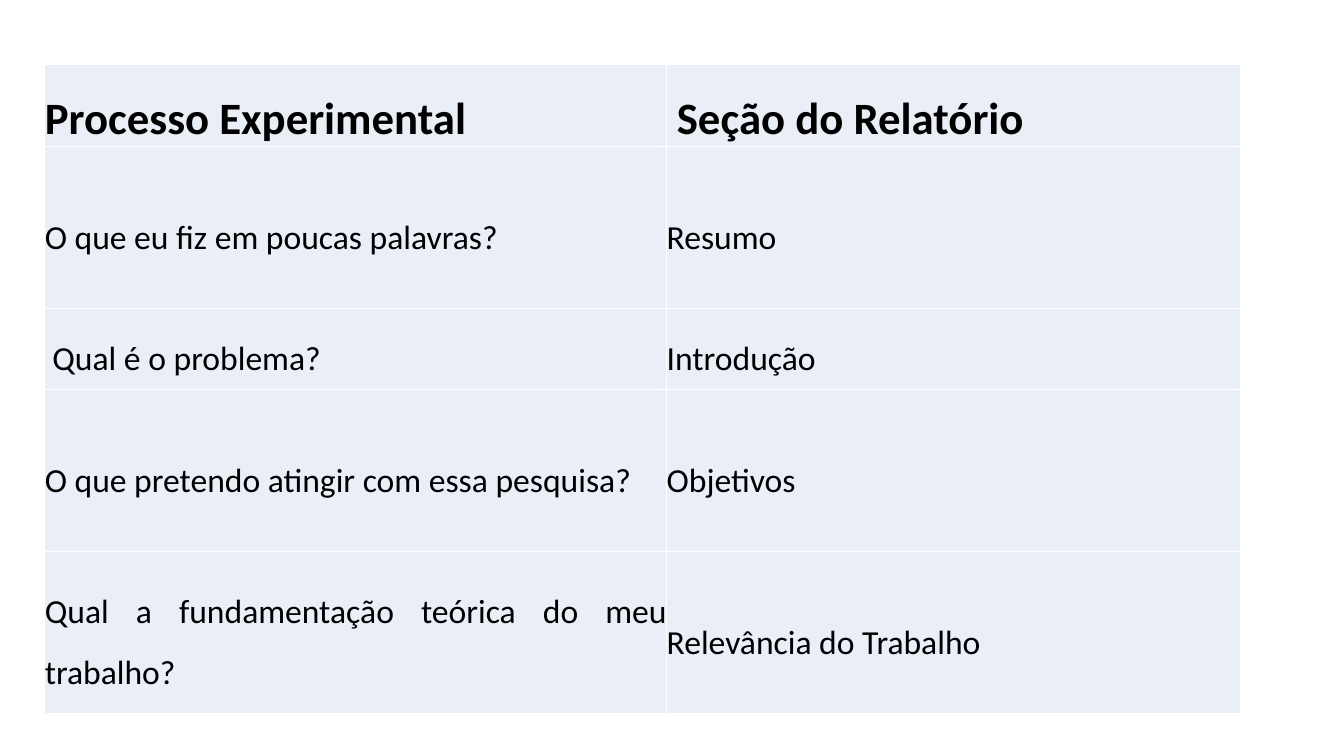
from dataclasses import dataclass

import pptx
import pptx.dml.color
import pptx.enum.text
import pptx.oxml
import pptx.oxml.ns
import pptx.util
from pptx.util import Pt


@dataclass(frozen=True)
class Theme:
    font: str = "Calibri"
    text: str = "000000"
    fill: str = "EAEFF7"
    border: str = "FFFFFF"
    header_size: int = 32
    body_size: int = 24


THEME = Theme()
ROW_UNIT = 57.8
COLUMN_WIDTHS = (444.24, 409.68)
# Each row: height in row units, experimental question, report section
ROWS = (
    (1, "Processo Experimental", " Seção do Relatório"),
    (2, "O que eu fiz em poucas palavras?", "Resumo"),
    (1, " Qual é o problema?", "Introdução"),
    (2, "O que pretendo atingir com essa pesquisa?", "Objetivos"),
    (2, "Qual a fundamentação teórica do meu trabalho?", "Relevância do Trabalho"),
)


def rgb(color):
    return pptx.dml.color.RGBColor.from_string(color)


def add_borders(cell):
    """Put a thin line on all four sides, ahead of the cell fill."""
    properties = cell._tc.get_or_add_tcPr()
    for position, side in enumerate(("lnL", "lnR", "lnT", "lnB")):
        line = pptx.oxml.parse_xml(
            f'<a:{side} {pptx.oxml.ns.nsdecls("a")} w="{Pt(1)}"><a:solidFill>'
            f'<a:srgbClr val="{THEME.border}"/></a:solidFill></a:{side}>'
        )
        properties.insert(position, line)


def fill_cell(cell, text, is_header):
    cell.margin_left = cell.margin_right = cell.margin_top = cell.margin_bottom = Pt(0)
    cell.vertical_anchor = pptx.enum.text.MSO_ANCHOR.MIDDLE
    cell.fill.solid()
    cell.fill.fore_color.rgb = rgb(THEME.fill)
    add_borders(cell)
    cell.text = text
    paragraph = cell.text_frame.paragraphs[0]
    paragraph.alignment = pptx.enum.text.PP_ALIGN.JUSTIFY
    paragraph.line_spacing = 1.5
    paragraph.font.name = THEME.font
    paragraph.font.size = Pt(THEME.header_size if is_header else THEME.body_size)
    paragraph.font.bold = is_header
    paragraph.font.color.rgb = rgb(THEME.text)


def add_report_table(slide, left, top):
    height = ROW_UNIT * sum(units for units, *_ in ROWS)
    table = slide.shapes.add_table(
        len(ROWS), len(COLUMN_WIDTHS),
        Pt(left), Pt(top), Pt(sum(COLUMN_WIDTHS)), Pt(height),
    ).table
    table.horz_banding = False
    for column, width in zip(table.columns, COLUMN_WIDTHS):
        column.width = Pt(width)
    for row_index, (units, *texts) in enumerate(ROWS):
        table.rows[row_index].height = Pt(units * ROW_UNIT)
        for column_index, text in enumerate(texts):
            fill_cell(table.cell(row_index, column_index), text, row_index == 0)


def main():
    presentation = pptx.Presentation()
    presentation.slide_width = Pt(960)
    presentation.slide_height = Pt(540)
    slide = presentation.slides.add_slide(presentation.slide_layouts[6])
    add_report_table(slide, left=32, top=46.2)
    presentation.save("out.pptx")


if __name__ == "__main__":
    main()
